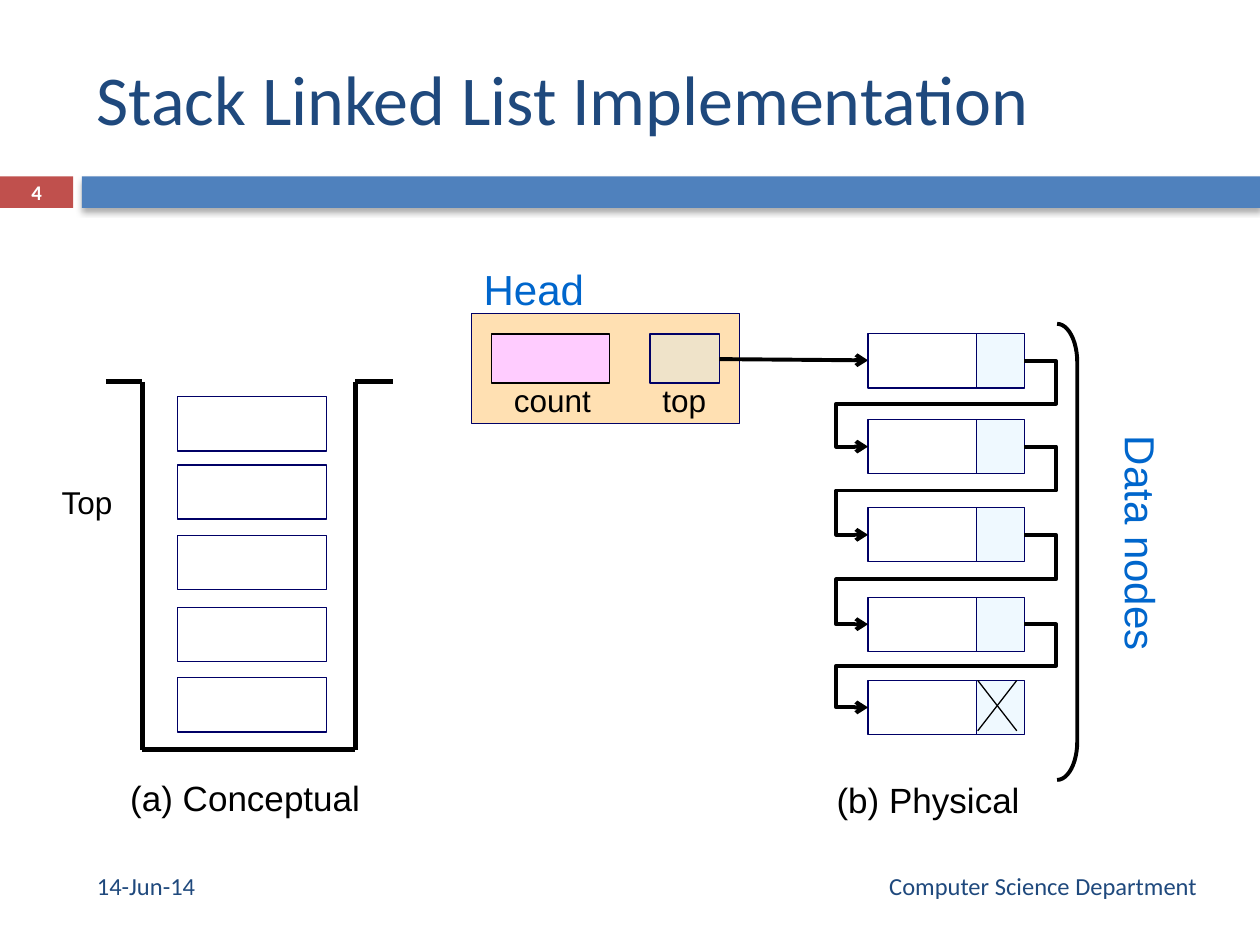
import pptx
import pptx.util
import pptx.dml.color
import pptx.enum.shapes
import pptx.enum.text
import pptx.oxml
import pptx.oxml.ns
from pptx.util import Inches

RGBColor = pptx.dml.color.RGBColor
SHAPE = pptx.enum.shapes.MSO_SHAPE
CONNECTOR = pptx.enum.shapes.MSO_CONNECTOR
ALIGN = pptx.enum.text.PP_ALIGN
ANCHOR = pptx.enum.text.MSO_ANCHOR
qn = pptx.oxml.ns.qn

BLACK = RGBColor(0x00, 0x00, 0x00)
WHITE = RGBColor(0xFF, 0xFF, 0xFF)
RED = RGBColor(0xC0, 0x50, 0x4D)
BLUE = RGBColor(0x4F, 0x81, 0xBD)
TITLE_BLUE = RGBColor(0x1F, 0x49, 0x7D)
LABEL_BLUE = RGBColor(0x00, 0x66, 0xCC)
NAVY = RGBColor(0x00, 0x00, 0x66)
ORANGE = RGBColor(0xFF, 0x99, 0x00)
PALE_BLUE = RGBColor(0xCC, 0xEC, 0xFF)
PINK = RGBColor(0xFF, 0xCC, 0xFF)

STACK_TOPS = [3.15, 3.69, 4.25, 4.82, 5.38]
NODE_TOPS = [2.65, 3.33, 4.03, 4.74, 5.4]
NODE_LEFT, LINK_LEFT, LINK_RIGHT = 6.89, 7.75, 8.13
NODE_HEIGHT = 0.43


def child(parent, tag, **attributes):
    element = pptx.oxml.parse_xml(f"<a:{tag} {pptx.oxml.ns.nsdecls('a')}/>")
    for name, value in attributes.items():
        element.set(name, str(value))
    parent.append(element)
    return element


def add_box(slide, left, top, width, height, fill=None, line=NAVY,
            weight=0.75, opacity=None, kind=SHAPE.RECTANGLE):
    box = slide.shapes.add_shape(
        kind, Inches(left), Inches(top), Inches(width), Inches(height))
    box.shadow.inherit = False
    if fill is None:
        box.fill.background()
    else:
        box.fill.solid()
        box.fill.fore_color.rgb = fill
    if opacity is not None:
        color = box._element.spPr.find(qn("a:solidFill")).find(qn("a:srgbClr"))
        child(color, "alpha", val=opacity * 1000)
    if line is None:
        box.line.fill.background()
    else:
        box.line.color.rgb = line
        box.line.width = pptx.util.Pt(weight)
    return box


def add_label(slide, text, left, top, width, height, size, color=BLACK,
              align=ALIGN.LEFT, font="Arial", anchor=ANCHOR.TOP,
              spacing=1.05, bold=False, rotation=0):
    label = slide.shapes.add_textbox(
        Inches(left), Inches(top), Inches(width), Inches(height))
    label.rotation = rotation
    frame = label.text_frame
    frame.word_wrap = True
    frame.vertical_anchor = anchor
    paragraph = frame.paragraphs[0]
    paragraph.text = text
    paragraph.alignment = align
    paragraph.line_spacing = spacing
    paragraph.font.name = font
    paragraph.font.size = pptx.util.Pt(size)
    paragraph.font.bold = bold
    paragraph.font.color.rgb = color


def add_line(slide, start, end, weight, arrow=False, kind=CONNECTOR.STRAIGHT):
    line = slide.shapes.add_connector(
        kind, *(Inches(value) for value in (*start, *end)))
    line.line.color.rgb = BLACK
    line.line.width = pptx.util.Pt(weight)
    if arrow:
        child(line.line._get_or_add_ln(), "tailEnd", type="arrow")
    child(line._element.spPr, "effectLst")
    return line


def add_link(slide, start, end):
    link = add_line(slide, start, end, 2.25, True, CONNECTOR.ELBOW)
    geometry = link._element.spPr.find(qn("a:prstGeom"))
    geometry.set("prst", "bentConnector5")
    guides = geometry.find(qn("a:avLst"))
    for number, value in enumerate((-20300, 49800, 120300), 1):
        child(guides, "gd", name=f"adj{number}", fmla=f"val {value}")


def add_frame(slide):
    add_box(slide, 0, 1.4, 0.58, 0.25, RED, None)
    bar = add_box(slide, 0.65, 1.4, 9.35, 0.25, BLUE, None)
    effects = bar._element.spPr.find(qn("a:effectLst"))
    shadow = child(effects, "outerShdw", blurRad=pptx.util.Pt(3.5),
                   dist=pptx.util.Pt(2.2), dir=5400000, rotWithShape=0)
    child(child(shadow, "srgbClr", val="000000"), "alpha", val=32000)
    style = dict(font="Calibri", anchor=ANCHOR.MIDDLE, spacing=1.0)
    add_label(slide, "Stack Linked List Implementation",
              0.67, 0.3, 8.83, 0.95, 40, TITLE_BLUE, **style)
    add_label(slide, "14-Jun-14", 0.67, 6.83, 2.92, 0.4, 14, TITLE_BLUE, **style)
    add_label(slide, "Computer Science Department",
              3.67, 6.83, 5.93, 0.4, 14, TITLE_BLUE, ALIGN.RIGHT, **style)
    add_label(slide, "4", 0, 1.39, 0.58, 0.27, 11.9, WHITE, ALIGN.CENTER,
              bold=True, **style)


def add_conceptual_stack(slide):
    left, right, rim, bottom = 1.13, 2.82, 3.03, 5.95
    walls = [
        ((left, rim), (left, bottom)),
        ((right, rim), (right, bottom)),
        ((left, bottom), (right, bottom)),
        ((right, rim), (right + 0.3, rim)),
        ((left - 0.29, rim), (left, rim)),
    ]
    for start, end in walls:
        add_line(slide, start, end, 3)
    for top in STACK_TOPS:
        add_box(slide, 1.41, top, 1.18, 0.43)
    add_label(slide, "Top ", 0.35, 3.77, 0.75, 0.48, 18, align=ALIGN.CENTER)
    add_label(slide, "(a) Conceptual ", 0.92, 6.1, 2.13, 0.48, 20,
              align=ALIGN.CENTER)


def add_head(slide):
    add_box(slide, 3.74, 2.49, 2.13, 0.87, ORANGE, opacity=30)
    add_box(slide, 5.16, 2.65, 0.55, 0.39, PALE_BLUE, opacity=30)
    add_box(slide, 3.9, 2.65, 0.94, 0.39, PINK, BLACK)
    add_label(slide, "count", 3.98, 2.96, 0.87, 0.4, 18)
    add_label(slide, "top", 5.16, 2.96, 0.63, 0.4, 18)
    add_label(slide, "Head", 3.74, 2.02, 1.81, 0.47, 24, LABEL_BLUE)
    add_line(slide, (5.71, 2.85), (NODE_LEFT, 2.86), 2.25, arrow=True)


def add_data_nodes(slide):
    for top in NODE_TOPS:
        add_box(slide, NODE_LEFT, top, LINK_LEFT - NODE_LEFT, NODE_HEIGHT)
        add_box(slide, LINK_LEFT, top, LINK_RIGHT - LINK_LEFT, NODE_HEIGHT,
                PALE_BLUE, opacity=30)
    middles = [top + NODE_HEIGHT / 2 for top in NODE_TOPS]
    for upper, lower in zip(middles, middles[1:]):
        add_link(slide, (LINK_RIGHT, upper), (NODE_LEFT, lower))
    add_line(slide, (8.07, 5.4), (7.76, 5.8), 0.75)
    add_line(slide, (7.76, 5.4), (8.07, 5.8), 0.75)
    bracket = add_box(slide, 8.39, 2.57, 0.16, 3.62, line=BLACK, weight=2.25,
                      kind=SHAPE.RIGHT_BRACKET)
    bracket.adjustments[0] = 1.91
    add_label(slide, "Data nodes", 8.03, 4.03, 1.97, 0.63, 24, LABEL_BLUE,
              rotation=90)
    add_label(slide, "(b) Physical ", 5.87, 6.11, 3.07, 0.47, 20,
              align=ALIGN.CENTER)


def main():
    presentation = pptx.Presentation()
    presentation.slide_width = Inches(10)
    presentation.slide_height = Inches(7.5)
    slide = presentation.slides.add_slide(presentation.slide_layouts[6])
    add_frame(slide)
    add_conceptual_stack(slide)
    add_head(slide)
    add_data_nodes(slide)
    presentation.save("out.pptx")


if __name__ == "__main__":
    main()
